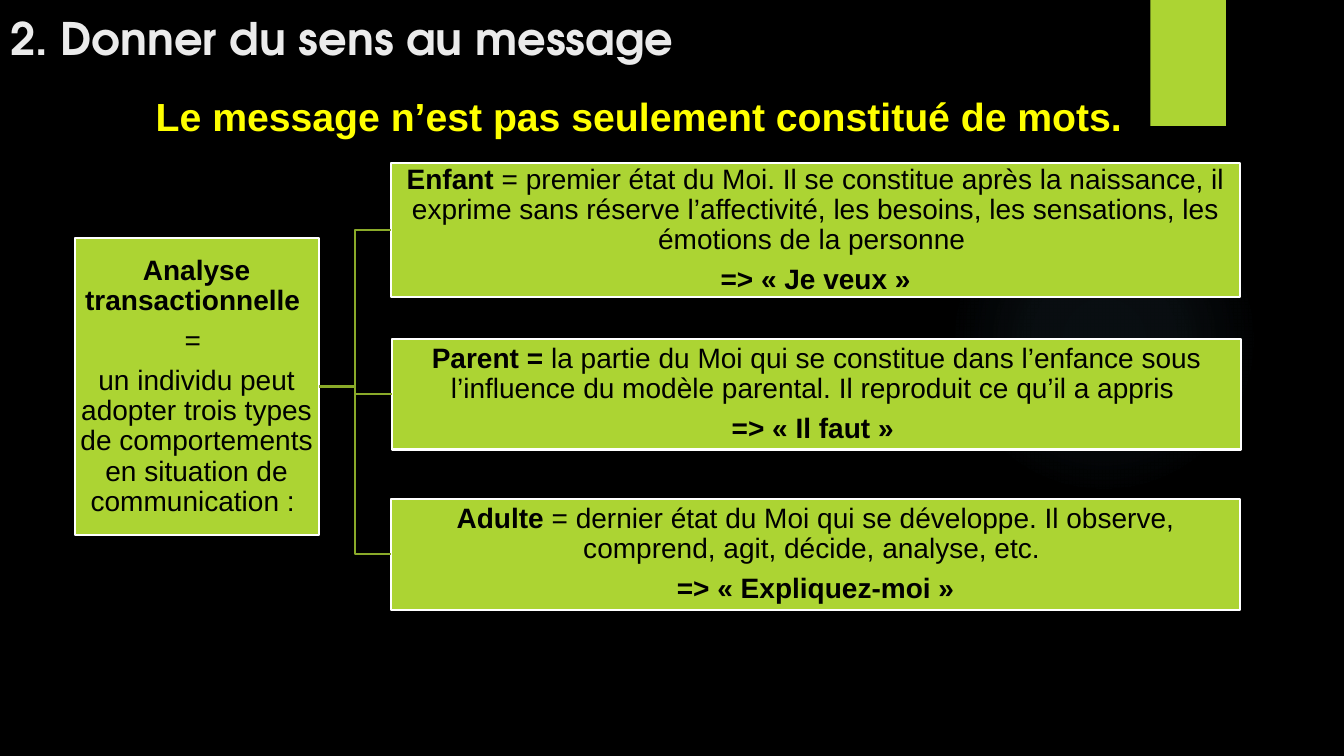
from lxml import etree
from pptx import Presentation
from pptx.dml.color import RGBColor
from pptx.enum.shapes import MSO_CONNECTOR, MSO_SHAPE
from pptx.enum.text import MSO_ANCHOR, MSO_AUTO_SIZE, PP_ALIGN
from pptx.oxml import parse_xml
from pptx.oxml.ns import nsdecls, qn
from pptx.util import Inches, Pt

RECT, OVAL = MSO_SHAPE.RECTANGLE, MSO_SHAPE.OVAL
ELBOW = MSO_CONNECTOR.ELBOW
LEFT, CENTER = PP_ALIGN.LEFT, PP_ALIGN.CENTER
MIDDLE, BOTTOM = MSO_ANCHOR.MIDDLE, MSO_ANCHOR.BOTTOM
NO_FIT, GROW = MSO_AUTO_SIZE.NONE, MSO_AUTO_SIZE.SHAPE_TO_FIT_TEXT
RIGHT_SIDE, LEFT_SIDE = 3, 1

COLORS = {"back": "000000", "lime": "ACD433", "line": "8AAA29", "edge": "FFFFFF",
          "title": "EBEBEB", "lead": "FFFF00", "text": "000000", "glow": "7AC4F0"}
GLOW = [(0, 7), (36, 6), (69, 0)]

ROOT = [
    [("Analyse transactionnelle ", True)],
    [("= ", False)],
    [("un individu peut adopter trois types de comportements "
      "en situation de communication : ", False)],
]
STATES = [
    ((3.88, 1.62, 8.42, 1.33), [
        [("Enfant ", True),
         ("= premier état du Moi. Il se constitue après la naissance, il exprime sans réserve "
          "l’affectivité, les besoins, les sensations, les émotions de la personne ", False)],
        [("=> « Je veux »", True)]]),
    ((3.89, 3.36, 8.42, 1.1), [
        [("Parent = ", True),
         ("la partie du Moi qui se constitue dans l’enfance sous l’influence du modèle "
          "parental. Il reproduit ce qu’il a appris ", False)],
        [("=> « Il faut » ", True)]]),
    ((3.88, 4.95, 8.42, 1.1), [
        [("Adulte ", True),
         ("= dernier état du Moi qui se développe. Il observe, comprend, agit, décide, "
          "analyse, etc. ", False)],
        [("=> « Expliquez-moi »", True)]]),
]


def color(name):
    """Return a named colour."""
    return RGBColor.from_string(COLORS[name])


def place(box):
    """Turn a box in inches into lengths."""
    return [Inches(n) for n in box]


def style(run, font, size, name, bold):
    """Format one run."""
    run.font.name, run.font.size, run.font.bold = font, Pt(size), bold
    run.font.color.rgb = color(name)


def add_block(slide, kind, box):
    """Add a lime shape with no line or shadow."""
    shape = slide.shapes.add_shape(kind, *place(box))
    shape.shadow.inherit = False
    shape.fill.solid()
    shape.fill.fore_color.rgb = color("lime")
    shape.line.fill.background()
    return shape


def add_decor(slide, glow_box, tab_box):
    """Add the faint round glow and the lime tab."""
    glow = add_block(slide, OVAL, glow_box)
    stops = "".join(
        f'<a:gs pos="{pos * 1000}"><a:srgbClr val="{COLORS["glow"]}">'
        f'<a:alpha val="{alpha * 1000}"/></a:srgbClr></a:gs>' for pos, alpha in GLOW)
    fill = parse_xml(
        f'<a:gradFill {nsdecls("a")} rotWithShape="1"><a:gsLst>{stops}</a:gsLst>'
        '<a:path path="circle"><a:fillToRect l="50000" t="50000" r="50000" b="50000"/>'
        '</a:path></a:gradFill>')
    props = glow.element.spPr
    props.replace(props.find(qn("a:solidFill")), fill)
    add_block(slide, RECT, tab_box)


def add_title(slide, box, text):
    """Place and format the title."""
    title = slide.shapes.title
    title.left, title.top, title.width, title.height = place(box)
    frame = title.text_frame
    frame.text = text
    frame.auto_size, frame.vertical_anchor = NO_FIT, BOTTOM
    frame.paragraphs[0].alignment = LEFT
    style(frame.paragraphs[0].runs[0], "TeX Gyre Adventor", 32, "title", True)


def add_lead(slide, box, text):
    """Add the yellow lead sentence."""
    frame = slide.shapes.add_textbox(*place(box)).text_frame
    frame.word_wrap, frame.auto_size = True, GROW
    frame.text = text
    frame.paragraphs[0].alignment = CENTER
    style(frame.paragraphs[0].runs[0], "Arial", 28, "lead", True)


def add_card(slide, box, paras):
    """Add a lime card with centred text."""
    card = add_block(slide, RECT, box)
    card.line.color.rgb, card.line.width = color("edge"), Pt(1.5)
    frame = card.text_frame
    frame.word_wrap, frame.vertical_anchor = True, MIDDLE
    frame.margin_left = frame.margin_right = Inches(0.01)
    frame.margin_top = frame.margin_bottom = Inches(0.01)
    for i, parts in enumerate(paras):
        para = frame.add_paragraph() if i else frame.paragraphs[0]
        para.alignment, para.line_spacing, para.space_after = CENTER, 0.9, Pt(7)
        for text, bold in parts:
            run = para.add_run()
            run.text = text
            style(run, "Arial", 20, "text", bold)
    return card


def add_link(slide, start, end):
    """Join two cards with an elbow line."""
    link = slide.shapes.add_connector(ELBOW, 0, 0, 0, 0)
    link.begin_connect(start, RIGHT_SIDE)
    link.end_connect(end, LEFT_SIDE)
    link.line.color.rgb, link.line.width = color("line"), Pt(1.5)
    etree.SubElement(link.element.spPr, qn("a:effectLst"))


def add_tree(slide, box):
    """Add the root card and its three linked states."""
    root = add_card(slide, box, ROOT)
    for state_box, paras in STATES:
        add_link(slide, root, add_card(slide, state_box, paras))


def main():
    """Build and save the slide."""
    deck = Presentation()
    deck.slide_width, deck.slide_height = Inches(13.33), Inches(7.5)
    slide = deck.slides.add_slide(deck.slide_layouts[5])
    slide.background.fill.solid()
    slide.background.fill.fore_color.rgb = color("back")
    add_decor(slide, (9.41, 1.83, 3.08, 3.08), (11.41, 0, 0.75, 1.25))
    add_title(slide, (0, 0, 11.84, 0.69), "2. Donner du sens au message")
    add_lead(slide, (0.24, 0.87, 12.19, 0.57),
             "Le message n’est pas seulement constitué de mots.")
    add_tree(slide, (0.74, 2.36, 2.42, 2.95))
    deck.save("out.pptx")


if __name__ == "__main__":
    main()
